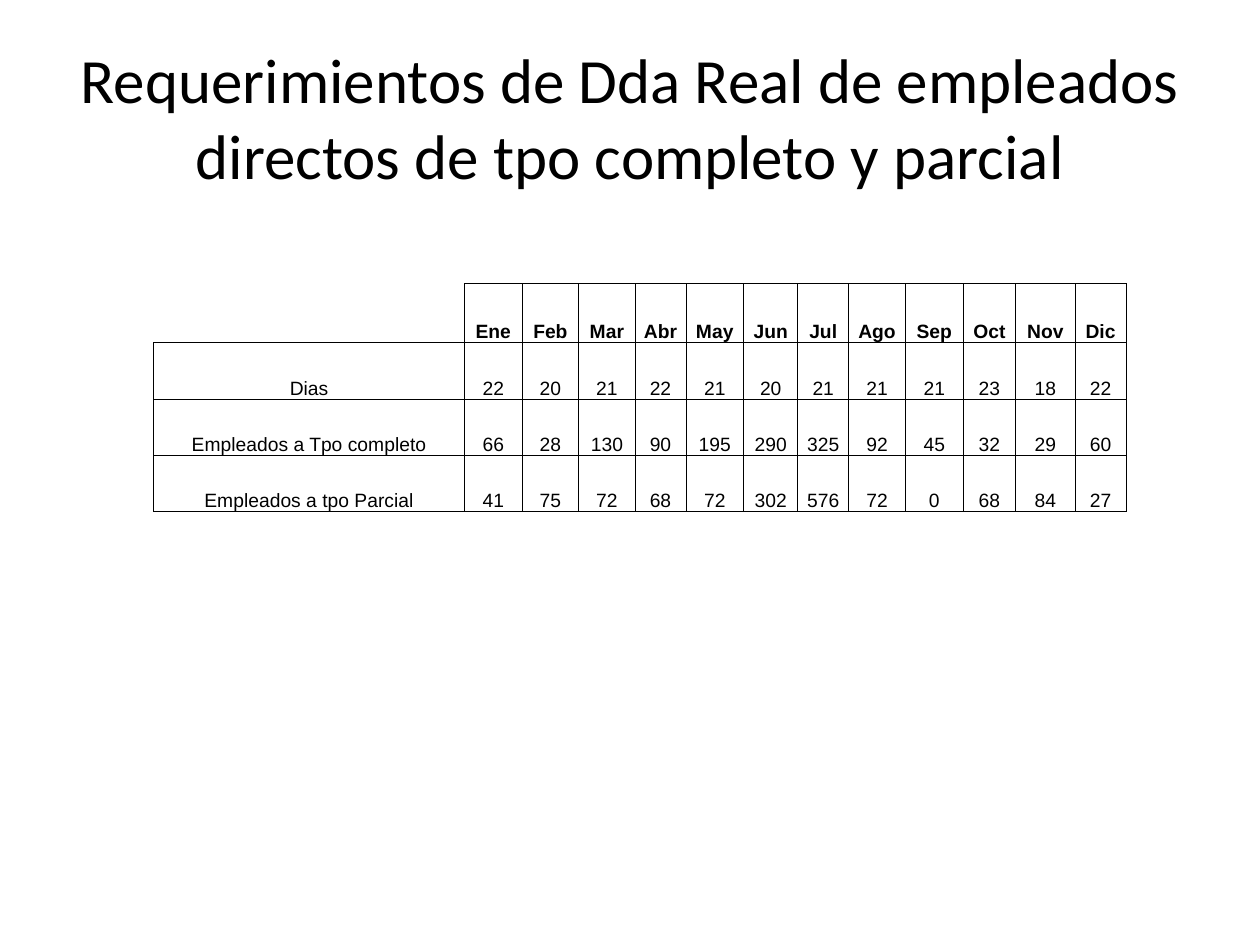
import pptx
import pptx.util
import pptx.dml.color
import pptx.enum.text
import pptx.oxml
import pptx.oxml.ns
from pptx.util import Pt


def color(value):
    return pptx.dml.color.RGBColor.from_string(value)


def add_border(cell, side, visible):
    namespace = pptx.oxml.ns.nsdecls("a")
    fill = '<a:solidFill><a:srgbClr val="000000"/></a:solidFill>' if visible else "<a:noFill/>"
    width = Pt(0.5) if visible else 0
    border = pptx.oxml.parse_xml(f'<a:{side} {namespace} w="{width}">{fill}</a:{side}>')
    cell._tc.get_or_add_tcPr().append(border)


presentation = pptx.Presentation()
presentation.slide_width = Pt(720)
presentation.slide_height = Pt(540)
slide = presentation.slides.add_slide(presentation.slide_layouts[6])

title = slide.shapes.add_textbox(Pt(36), Pt(21.6), Pt(648), Pt(90))
title.text_frame.word_wrap = True
title.text_frame.vertical_anchor = pptx.enum.text.MSO_ANCHOR.MIDDLE
title.text_frame.text = "Requerimientos de Dda Real de empleados directos de tpo completo y parcial"
paragraph = title.text_frame.paragraphs[0]
paragraph.alignment = pptx.enum.text.PP_ALIGN.CENTER
title_font = paragraph.runs[0].font
title_font.name = "Calibri"
title_font.size = Pt(36)
title_font.color.rgb = color("000000")

rows = [
    ["", "Ene", "Feb", "Mar", "Abr", "May", "Jun", "Jul", "Ago", "Sep", "Oct", "Nov", "Dic"],
    ["Dias", 22, 20, 21, 22, 21, 20, 21, 21, 21, 23, 18, 22],
    ["Empleados a Tpo completo", 66, 28, 130, 90, 195, 290, 325, 92, 45, 32, 29, 60],
    ["Empleados a tpo Parcial", 41, 75, 72, 68, 72, 302, 576, 72, 0, 68, 84, 27],
]
column_widths = [177.5, 33, 32.3, 32.3, 29, 33, 31, 29, 32.5, 33, 30, 34, 29]
row_heights = [33.7, 32.2, 32.2, 32.2]

table_frame = slide.shapes.add_table(
    len(rows), len(column_widths), Pt(87.9), Pt(162.2), Pt(sum(column_widths)), Pt(sum(row_heights))
)
table = table_frame.table
table.first_row = False
table.horz_banding = False
for column, width in zip(table.columns, column_widths):
    column.width = Pt(width)
for row, height in zip(table.rows, row_heights):
    row.height = Pt(height)

for row_index, values in enumerate(rows):
    for column_index, value in enumerate(values):
        cell = table.cell(row_index, column_index)
        is_corner = row_index == 0 and column_index == 0
        for side in ("lnL", "lnR", "lnT", "lnB"):
            add_border(cell, side, not is_corner or side in ("lnR", "lnB"))
        cell.fill.background()
        if is_corner:
            continue
        cell.margin_left = cell.margin_right = cell.margin_top = Pt(0.7)
        cell.margin_bottom = Pt(0)
        cell.vertical_anchor = pptx.enum.text.MSO_ANCHOR.BOTTOM
        cell.text_frame.text = str(value)
        paragraph = cell.text_frame.paragraphs[0]
        paragraph.alignment = pptx.enum.text.PP_ALIGN.CENTER
        font = paragraph.runs[0].font
        font.name = "Arial"
        font.size = Pt(11)
        font.bold = row_index == 0
        font.color.rgb = color("000000")

presentation.save("out.pptx")
